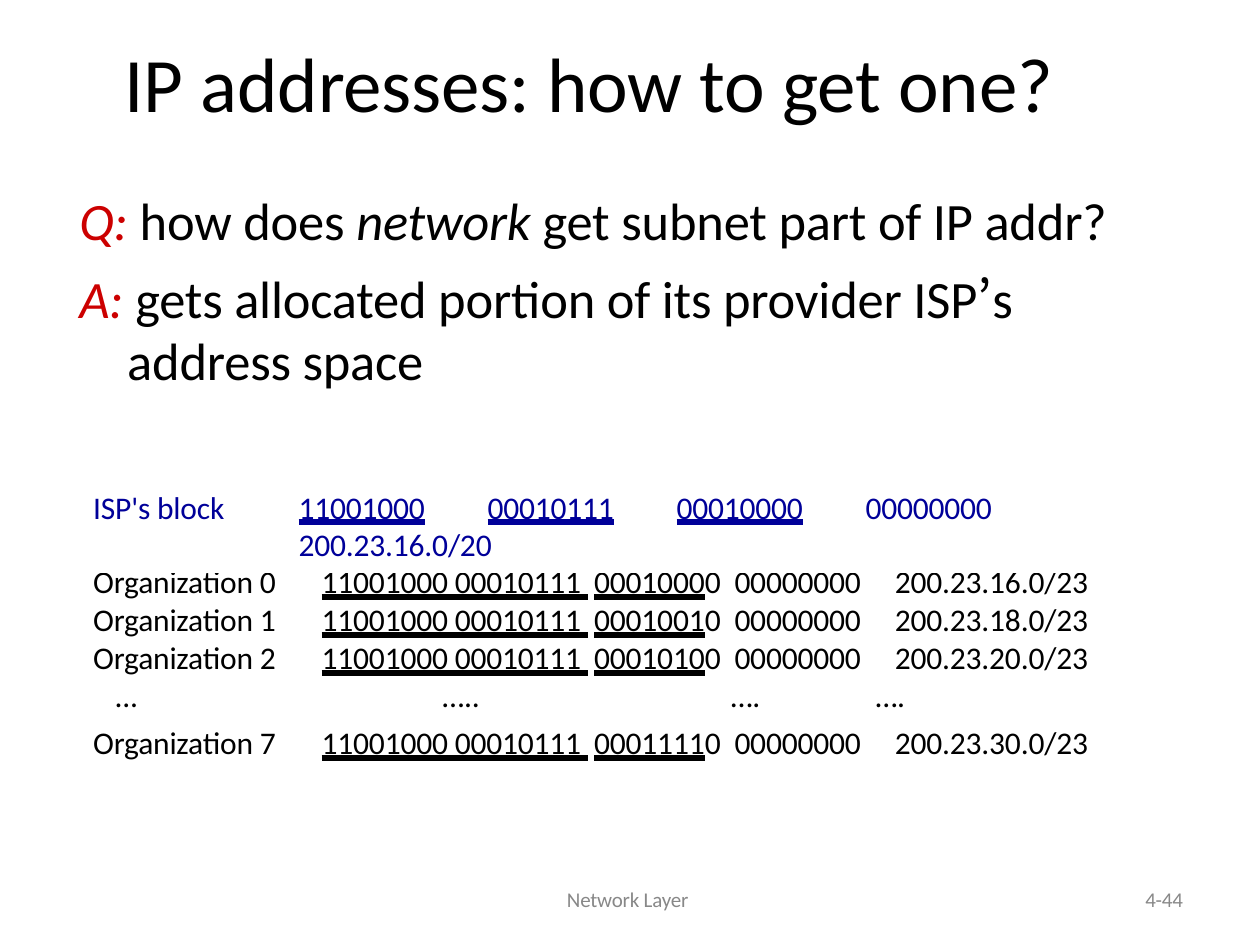
from dataclasses import dataclass

from lxml import etree
from pptx import Presentation
from pptx.dml.color import RGBColor
from pptx.enum.text import MSO_AUTO_SIZE, MSO_TEXT_UNDERLINE_TYPE, PP_ALIGN
from pptx.oxml.ns import qn
from pptx.util import Inches, Pt

LEFT, RIGHT, CENTER = PP_ALIGN.LEFT, PP_ALIGN.RIGHT, PP_ALIGN.CENTER
HEAVY = MSO_TEXT_UNDERLINE_TYPE.HEAVY_LINE

# Grid: 100 columns by 75 rows over the whole slide
SLIDE_WIDTH, SLIDE_HEIGHT = Inches(10), Inches(7.5)
COLUMN, ROW = SLIDE_WIDTH // 100, SLIDE_HEIGHT // 75


@dataclass(frozen=True)
class Theme:
    font: str = "Calibri"
    quote_font: str = "Noto Sans CJK JP"
    text: RGBColor = RGBColor(0x00, 0x00, 0x00)
    accent: RGBColor = RGBColor(0xCC, 0x00, 0x00)
    block: RGBColor = RGBColor(0x00, 0x00, 0x99)
    muted: RGBColor = RGBColor(0x88, 0x88, 0x88)
    title_size: int = 44
    body_size: int = 30
    table_size: int = 18
    footer_size: int = 12


THEME = Theme()


@dataclass(frozen=True)
class Box:
    """A region in grid columns and rows."""
    left: float
    top: float
    width: float
    height: float

    def lengths(self):
        return (int(self.left * COLUMN), int(self.top * ROW),
                int(self.width * COLUMN), int(self.height * ROW))

    def inner(self, left, top, width, height):
        return Box(self.left + left, self.top + top, width, height)


def add_run(paragraph, text, *, size, color=THEME.text, font=THEME.font,
            italic=False, underline=None, spacing=-0.1):
    run = paragraph.add_run()
    run.text = text
    run.font.name = font
    run.font.size = Pt(size)
    run.font.color.rgb = color
    run.font.italic = italic
    if underline:
        run.font.underline = underline
    run.font._element.set("spc", str(round(spacing * 100)))


def format_paragraph(paragraph, *, align=LEFT, margin=0, hanging=0, tabs=(),
                     line=None, before=0):
    properties = paragraph._p.get_or_add_pPr()
    properties.set("marL", str(int(margin * COLUMN)))
    properties.set("indent", str(int(-hanging * COLUMN)))
    if tabs:
        tab_list = etree.SubElement(properties, qn("a:tabLst"))
        for position in tabs:
            etree.SubElement(tab_list, qn("a:tab"),
                             pos=str(int(position * COLUMN)), algn="l")
    paragraph.alignment = align
    paragraph.space_before = Pt(before)
    if line:
        paragraph.line_spacing = Pt(line)


def add_frame(slide, box, inset=0.1):
    frame = slide.shapes.add_textbox(*box.lengths()).text_frame
    frame.word_wrap = True
    frame.auto_size = MSO_AUTO_SIZE.NONE
    frame.margin_left = frame.margin_right = frame.margin_bottom = 0
    frame.margin_top = int(inset * ROW)
    return frame


def add_label(slide, box, text, **run_format):
    paragraph = add_frame(slide, box).paragraphs[0]
    format_paragraph(paragraph, margin=0.1)
    add_run(paragraph, text, **run_format)


def add_question(slide, box):
    frame = add_frame(slide, box, inset=1.2)
    size = THEME.body_size
    label = {"size": size, "color": THEME.accent, "italic": True}

    question = frame.paragraphs[0]
    format_paragraph(question, margin=0.1)
    add_run(question, "Q: ", **label)
    add_run(question, "how does ", size=size)
    add_run(question, "network ", size=size, italic=True)
    add_run(question, "get subnet part of IP addr?", size=size)

    answer = frame.add_paragraph()
    format_paragraph(answer, margin=3.9, hanging=3.8, line=35.4, before=9.5)
    add_run(answer, "A: ", **label)
    add_run(answer, "gets allocated portion of its provider ISP", size=size)
    add_run(answer, "’", size=size, font=THEME.quote_font, spacing=0)
    add_run(answer, "s address space", size=size)


def add_provider_block(slide, box):
    style = {"size": THEME.table_size, "color": THEME.block}
    add_label(slide, box.inner(0, 0, 10.9, box.height), "ISP's block", **style)

    # Octets stand on tab stops; the address wraps to the second line
    paragraph = add_frame(slide, box.inner(16.3, 0, box.width - 16.3,
                                           box.height)).paragraphs[0]
    format_paragraph(paragraph, margin=0.1, tabs=(11.4, 22.7, 33.9, 46.4))
    add_run(paragraph, "11001000\t00010111\t00010000",
            underline=HEAVY, **style)
    add_run(paragraph, "\t00000000\t200.23.16.0/20", **style)


def add_organizations(slide, box):
    widths = (16.2, 34.3, 11.4, 17.6)
    heights = (2.8, 3, 3, 3.4, 3.2)
    line_heights = (17.1, 18.9, 18.9, 18.9, 21.5)
    # Alignment, left indent and right margin of each column
    data_layout = ((LEFT, 0.3, 0), (RIGHT, 0, 0.4),
                   (LEFT, 0.7, 0), (RIGHT, 0, 0.25))
    dots_layout = ((LEFT, 2, 0), (CENTER, 0, 7.7),
                   (LEFT, 0.4, 0), (LEFT, 0.5, 0))
    dots = ("...", "…..", "….", "….")
    organizations = (0, 1, 2, None, 7)  # None is the row of dots

    table = slide.shapes.add_table(len(heights), len(widths),
                                   *box.lengths()).table
    table.first_row = table.horz_banding = False
    for column, width in zip(table.columns, widths):
        column.width = int(width * COLUMN)
    for row, height in zip(table.rows, heights):
        row.height = int(height * ROW)

    for row, number, line in zip(table.rows, organizations, line_heights):
        is_dots = number is None
        layout = dots_layout if is_dots else data_layout
        if is_dots:
            texts = dots
        else:
            texts = (f"Organization {number}", f"0001{number:03b}",
                     "00000000", f"200.23.{16 + 2 * number}.0/23")
        for index, (cell, text) in enumerate(zip(row.cells, texts)):
            align, indent, margin = layout[index]
            cell.fill.background()
            cell.margin_left = cell.margin_top = cell.margin_bottom = 0
            cell.margin_right = int(margin * COLUMN)
            paragraph = cell.text_frame.paragraphs[0]
            format_paragraph(paragraph, align=align, margin=indent, line=line)
            style = {"size": THEME.table_size}
            if index == 1 and not is_dots:
                # Underlined subnet bits, then the first host bit
                for bits, spacing in (("11001000 00010111", -0.1),
                                      (" ", 3.4), (text, -0.1)):
                    add_run(paragraph, bits, underline=HEAVY,
                            spacing=spacing, **style)
                text = "0"
            add_run(paragraph, text, **style)


def add_footer(slide, box):
    style = {"size": THEME.footer_size, "color": THEME.muted}
    add_label(slide, box.inner(0, 0, 10.3, box.height), "Network Layer", **style)
    add_label(slide, box.inner(45.9, 0, 3.5, box.height), "4-44", **style)


def main():
    presentation = Presentation()
    presentation.slide_width = SLIDE_WIDTH
    presentation.slide_height = SLIDE_HEIGHT
    slide = presentation.slides.add_slide(presentation.slide_layouts[6])

    add_footer(slide, Box(44.9, 70.3, 49.4, 2.3))
    add_label(slide, Box(9.8, 2.7, 74.4, 7.6), "IP addresses: how to get one?",
              size=THEME.title_size)
    add_question(slide, Box(6.2, 13.7, 82.4, 17.4))
    add_provider_block(slide, Box(7.3, 38.6, 77.8, 3.3))
    add_organizations(slide, Box(7.1, 45.4, 79.5, 15.4))
    presentation.save("out.pptx")


if __name__ == "__main__":
    main()
